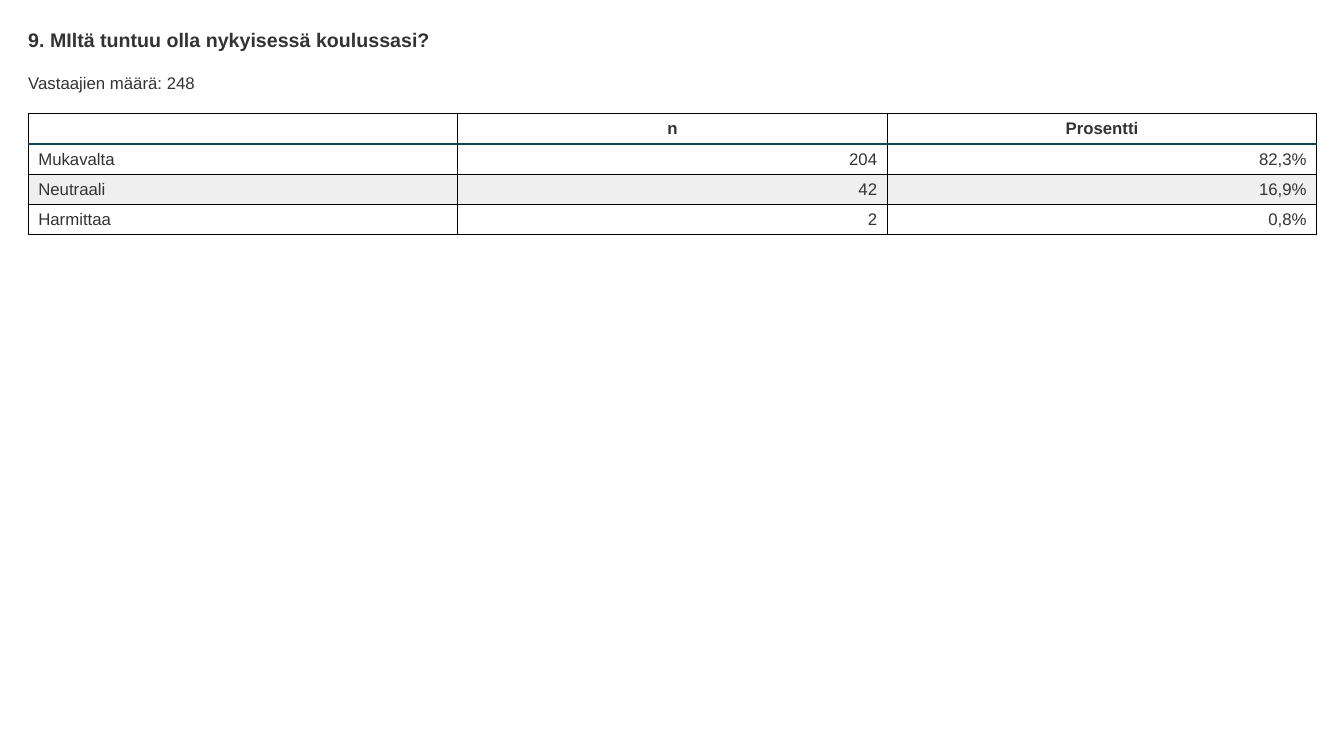
from dataclasses import dataclass
from lxml import etree
from pptx import Presentation
from pptx.dml.color import RGBColor
from pptx.enum.text import MSO_ANCHOR, MSO_AUTO_SIZE, PP_ALIGN
from pptx.oxml.ns import qn
from pptx.util import Inches, Pt

LEFT, CENTER, RIGHT = PP_ALIGN.LEFT, PP_ALIGN.CENTER, PP_ALIGN.RIGHT
MIDDLE = MSO_ANCHOR.MIDDLE
GROW = MSO_AUTO_SIZE.SHAPE_TO_FIT_TEXT

WIDE, HIGH = 13.33, 7.5
EDGE = 0.28
SPAN = 12.78
ROW = HIGH / 25


@dataclass(frozen=True)
class Theme:
    font: str = "Arial"
    ink: str = "333333"
    rule: str = "000000"
    accent: str = "124456"
    plain: str = "FFFFFF"
    band: str = "EFEFEF"
    title: int = 14
    body: int = 12
    thin: int = 1
    thick: int = 2


THEME = Theme()


def apply(target, values):
    for name, value in values.items():
        setattr(target, name, value)


def write(para, text, size, bold=False, align=LEFT):
    para.alignment = align
    run = para.add_run()
    run.text = text
    apply(run.font, {"name": THEME.font, "size": Pt(size), "bold": bold})
    run.font.color.rgb = RGBColor.from_string(THEME.ink)


def add_text(slide, top, height, text, size, bold=False):
    box = slide.shapes.add_textbox(
        Inches(EDGE), Inches(top), Inches(SPAN), Inches(height))
    frame = box.text_frame
    apply(frame, {"margin_left": 0, "margin_right": 0, "margin_top": 0,
                  "margin_bottom": 0, "word_wrap": True, "auto_size": GROW})
    write(frame.paragraphs[0], text, size, bold)


def add_edge(cell, side, color, width):
    line = etree.SubElement(
        cell._tc.get_or_add_tcPr(), qn(f"a:ln{side}"), w=str(Pt(width)))
    fill = etree.SubElement(line, qn("a:solidFill"))
    etree.SubElement(fill, qn("a:srgbClr"), val=color)


def style_cell(cell, row):
    accent = {0: "B", 1: "T"}.get(row)
    for side in "LRTB":
        if side == accent:
            add_edge(cell, side, THEME.accent, THEME.thick)
        else:
            add_edge(cell, side, THEME.rule, THEME.thin)
    cell.fill.solid()
    shade = THEME.band if row and row % 2 == 0 else THEME.plain
    cell.fill.fore_color.rgb = RGBColor.from_string(shade)
    apply(cell, {"margin_top": 0, "margin_bottom": 0,
                 "vertical_anchor": MIDDLE})


def add_grid(slide, top, rows):
    table = slide.shapes.add_table(
        len(rows), len(rows[0]), Inches(EDGE), Inches(top),
        Inches(SPAN), Inches(ROW * len(rows))).table
    for r, values in enumerate(rows):
        for c, text in enumerate(values):
            cell = table.cell(r, c)
            style_cell(cell, r)
            if text:
                align = LEFT if c == 0 else RIGHT if r else CENTER
                write(cell.text_frame.paragraphs[0], text, THEME.body,
                      r == 0, align)


def main():
    deck = Presentation()
    apply(deck, {"slide_width": Inches(WIDE), "slide_height": Inches(HIGH)})
    slide = deck.slides.add_slide(deck.slide_layouts[6])
    add_text(slide, EDGE, 0.23, "9. MIltä tuntuu olla nykyisessä koulussasi?",
             THEME.title, True)
    add_text(slide, 0.72, 0.2, "Vastaajien määrä: 248", THEME.body)
    add_grid(slide, 1.13, [
        ("", "n", "Prosentti"),
        ("Mukavalta", "204", "82,3%"),
        ("Neutraali", "42", "16,9%"),
        ("Harmittaa", "2", "0,8%"),
    ])
    deck.save("out.pptx")


if __name__ == "__main__":
    main()
